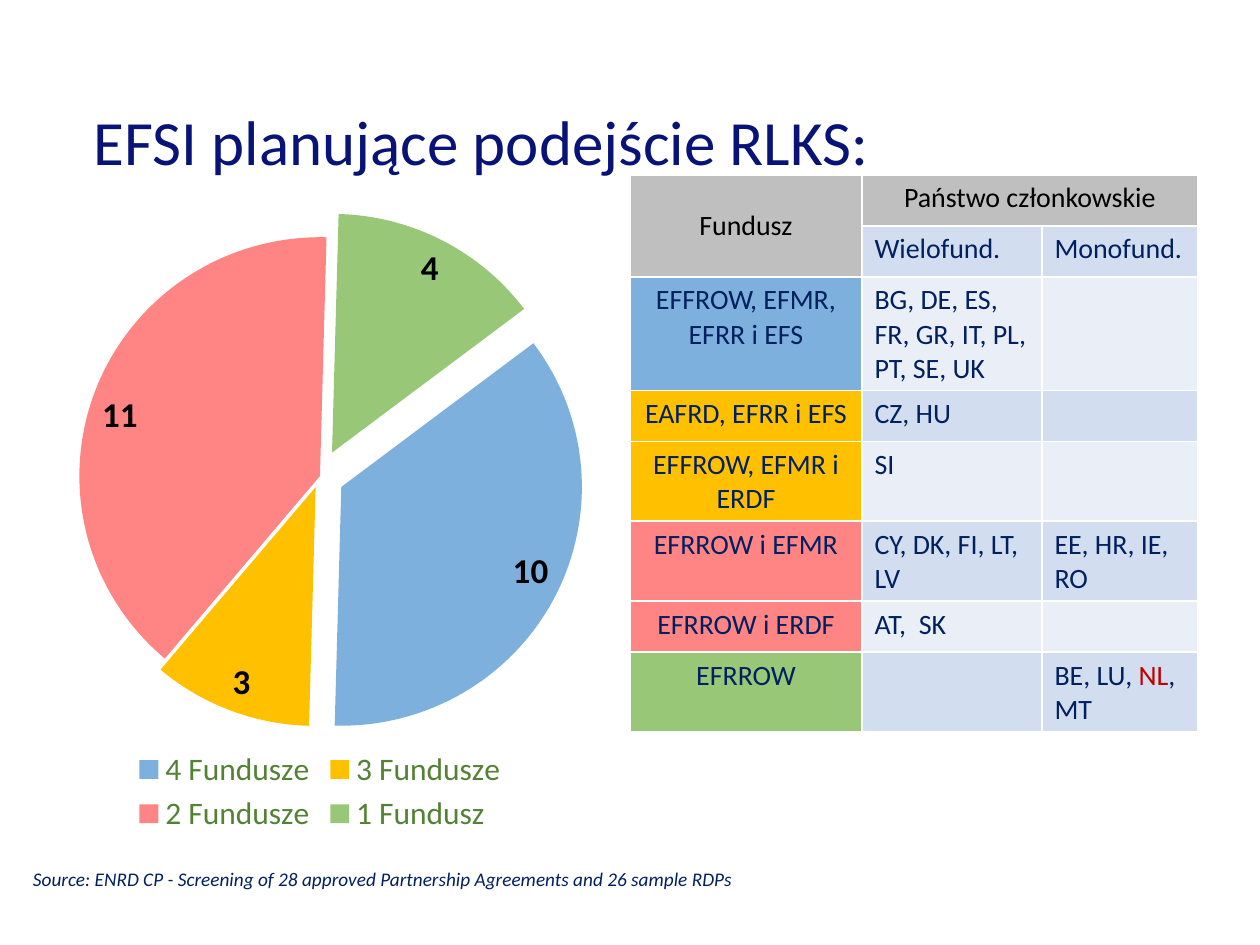
from dataclasses import dataclass

from lxml.etree import SubElement
from pptx import Presentation
from pptx.chart.data import CategoryChartData
from pptx.dml.color import RGBColor
from pptx.enum.chart import XL_CHART_TYPE as ChartType
from pptx.enum.chart import XL_LABEL_POSITION as LabelPosition
from pptx.enum.chart import XL_LEGEND_POSITION as LegendPosition
from pptx.enum.text import MSO_ANCHOR as Anchor
from pptx.enum.text import PP_ALIGN as Align
from pptx.oxml import parse_xml
from pptx.oxml.ns import nsdecls, qn
from pptx.util import Emu, Pt

EMU_PER_PX = 914400 / 126
FONT = "Calibri"
COLOURS = {
    "title": "071376", "navy": "002060", "black": "000000", "white": "FFFFFF",
    "legend": "548235", "alert": "C00000", "header": "BFBFBF",
    "band_dark": "D2DEEF", "band_light": "EAEFF7",
    "blue": "7EB0DE", "yellow": "FFC000", "red": "FF8585", "green": "97C777",
}


@dataclass(frozen=True)
class Slice:
    label: str
    value: int
    colour: str
    explosion: int


@dataclass(frozen=True)
class FundRow:
    funds: str
    colour: str
    multi: str = ""
    mono: str = ""


@dataclass(frozen=True)
class TextLine:
    text: str
    box: tuple[int, int, int, int]
    size: int
    colour: str
    left_inset: int = 13
    top_inset: int = 6
    spacing: float = 1.0
    italic: bool = False


SLICES = [
    Slice("4 Fundusze", 10, "blue", 10),
    Slice("3 Fundusze", 3, "yellow", 5),
    Slice("2 Fundusze", 11, "red", 0),
    Slice("1 Fundusz", 4, "green", 11),
]
FUND_ROWS = [
    FundRow("EFFROW, EFMR, EFRR i EFS", "blue", "BG, DE, ES, FR, GR, IT, PL, PT, SE, UK"),
    FundRow("EAFRD, EFRR i EFS", "yellow", "CZ, HU"),
    FundRow("EFFROW, EFMR i ERDF", "yellow", "SI"),
    FundRow("EFRROW i EFMR", "red", "CY, DK, FI, LT, LV", "EE, HR, IE, RO"),
    FundRow("EFRROW i ERDF", "red", "AT,  SK"),
    FundRow("EFRROW", "green", mono="BE, LU, NL, MT"),
]
HIGHLIGHT = "NL"
COLUMN_WIDTHS = [232, 180, 156]
ROW_HEIGHT = 51
TEXT_LINES = [
    TextLine("EFSI planujące podejście RLKS:", (66, 47, 926, 90), 36, "title",
             left_inset=28, top_inset=64, spacing=0.9),
    TextLine("Source: ENRD CP - Screening of 28 approved Partnership Agreements "
             "and 26 sample RDPs", (20, 861, 784, 36), 11, "navy", italic=True),
]


def px(length: int) -> Emu:
    return Emu(round(length * EMU_PER_PX))


def rgb(name: str) -> RGBColor:
    return RGBColor.from_string(COLOURS[name])


def style_font(font, size: int, colour: str) -> None:
    font.name = FONT
    font.size = Pt(size)
    font.color.rgb = rgb(colour)


def add_text_line(slide, line: TextLine) -> None:
    shape = slide.shapes.add_textbox(*map(px, line.box))
    frame = shape.text_frame
    frame.word_wrap = True
    frame.margin_left, frame.margin_top = px(line.left_inset), px(line.top_inset)
    frame.margin_bottom = 0
    frame.text = line.text
    paragraph = frame.paragraphs[0]
    paragraph.line_spacing = line.spacing
    font = paragraph.runs[0].font
    style_font(font, line.size, line.colour)
    font.italic = line.italic


def add_pie(slide) -> None:
    data = CategoryChartData()
    data.categories = [item.label for item in SLICES]
    data.add_series("Series 1", [item.value for item in SLICES])
    chart = slide.shapes.add_chart(
        ChartType.PIE, px(0), px(214), px(640), px(625), data).chart
    chart.has_title = False
    style_font(chart.font, 18, "black")

    chart.has_legend = True
    chart.legend.position = LegendPosition.BOTTOM
    chart.legend.include_in_layout = False
    style_font(chart.legend.font, 18, "legend")

    plot = chart.plots[0]
    plot.vary_by_categories = True
    plot.has_data_labels = True
    labels = plot.data_labels
    labels.show_value, labels.show_percentage = True, False
    labels.position = LabelPosition.INSIDE_END
    style_font(labels.font, 20, "black")
    labels.font.bold = True

    # Slice colours and how far each is pulled out
    series = plot.series[0]
    for index, item in enumerate(SLICES):
        fill = series.points[index].format.fill
        fill.solid()
        fill.fore_color.rgb = rgb(item.colour)
    for point, item in zip(series._element.findall(qn("c:dPt")), SLICES):
        for old in point.findall(qn("c:explosion")):
            point.remove(old)
        point.find(qn("c:spPr")).addprevious(
            parse_xml(f'<c:explosion {nsdecls("c")} val="{item.explosion}"/>'))

    # Rotation of the first slice and place of the pie
    pie = plot._element
    for old in pie.findall(qn("c:firstSliceAng")):
        pie.remove(old)
    SubElement(pie, qn("c:firstSliceAng")).set("val", "53")
    area = pie.getparent()
    for old in area.findall(qn("c:layout")):
        area.remove(old)
    places = {"x": 0.12, "y": 0.03, "w": 0.76, "h": 0.77}
    modes = '<c:layoutTarget val="inner"/><c:xMode val="edge"/><c:yMode val="edge"/>'
    values = "".join(f'<c:{key} val="{value}"/>' for key, value in places.items())
    area.insert(0, parse_xml(
        f'<c:layout {nsdecls("c")}><c:manualLayout>{modes}{values}</c:manualLayout></c:layout>'))


def fill_cell(cell, text: str, fill: str, colour: str = "navy", centred: bool = False) -> None:
    cell.fill.solid()
    cell.fill.fore_color.rgb = rgb(fill)
    paragraph = cell.text_frame.paragraphs[0]
    paragraph.alignment = Align.CENTER if centred else Align.LEFT
    for piece in filter(None, text.partition(HIGHLIGHT)):
        run = paragraph.add_run()
        run.text = piece
        style_font(run.font, 16, "alert" if piece == HIGHLIGHT else colour)


def add_borders(cell) -> None:
    properties = cell._tc.get_or_add_tcPr()
    for index, side in enumerate("LRTB"):
        properties.insert(index, parse_xml(
            f'<a:ln{side} {nsdecls("a")} w="12700"><a:solidFill>'
            f'<a:srgbClr val="{COLOURS["white"]}"/></a:solidFill></a:ln{side}>'))


def add_fund_table(slide) -> None:
    row_count = len(FUND_ROWS) + 2
    table = slide.shapes.add_table(
        row_count, len(COLUMN_WIDTHS), px(630), px(175),
        px(sum(COLUMN_WIDTHS)), px(ROW_HEIGHT * row_count)).table
    table.first_row = table.horz_banding = False
    for column, width in zip(table.columns, COLUMN_WIDTHS):
        column.width = px(width)

    # Two header rows
    table.cell(0, 0).merge(table.cell(1, 0))
    table.cell(0, 1).merge(table.cell(0, 2))
    fill_cell(table.cell(0, 0), "Fundusz", "header", "black", True)
    table.cell(0, 0).vertical_anchor = Anchor.MIDDLE
    fill_cell(table.cell(0, 1), "Państwo członkowskie", "header", "black", True)
    fill_cell(table.cell(1, 1), "Wielofund.", "band_dark")
    fill_cell(table.cell(1, 2), "Monofund.", "band_dark")

    # One row per combination of funds
    for index, row in enumerate(FUND_ROWS, start=2):
        band = "band_dark" if index % 2 else "band_light"
        fill_cell(table.cell(index, 0), row.funds, row.colour, centred=True)
        fill_cell(table.cell(index, 1), row.multi, band)
        fill_cell(table.cell(index, 2), row.mono, band)
    for cell in table.iter_cells():
        add_borders(cell)


def main() -> None:
    presentation = Presentation()
    presentation.slide_width, presentation.slide_height = px(1260), px(945)
    slide = presentation.slides.add_slide(presentation.slide_layouts[6])
    title, source = TEXT_LINES
    add_text_line(slide, title)
    add_pie(slide)
    add_fund_table(slide)
    add_text_line(slide, source)
    presentation.save("out.pptx")


if __name__ == "__main__":
    main()
